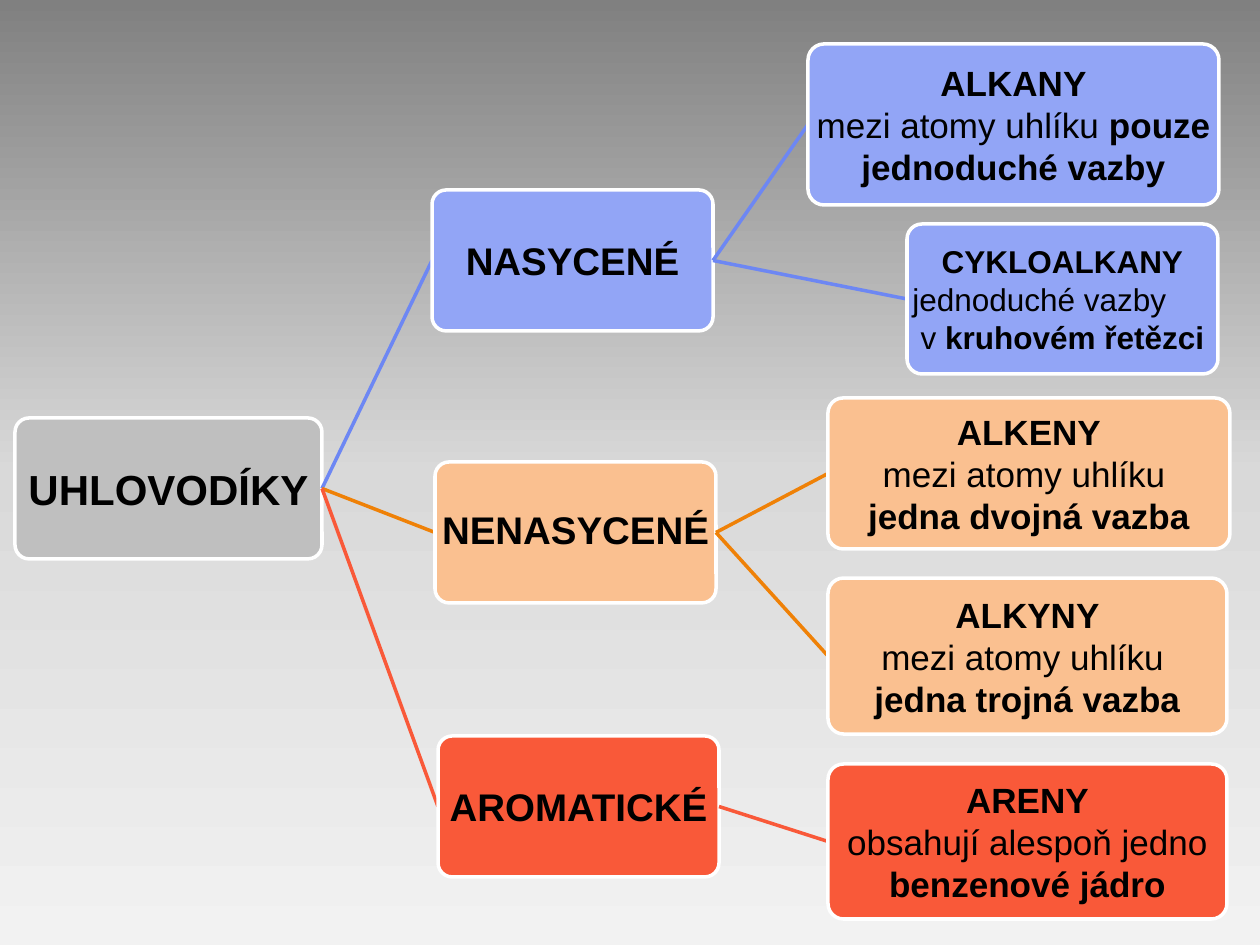
"""Build a slide with a tree diagram that classifies hydrocarbons."""
from copy import deepcopy
from dataclasses import dataclass

from pptx import Presentation
from pptx import util as u
from pptx.dml.color import RGBColor
from pptx.enum import shapes, text
from pptx.oxml.ns import qn
from pptx.oxml.xmlchemy import OxmlElement

PX_PER_INCH = 126
BLACK = RGBColor(0x00, 0x00, 0x00)
WHITE = RGBColor(0xFF, 0xFF, 0xFF)
GREY = RGBColor(0xBF, 0xBF, 0xBF)
BLUE = RGBColor(0x92, 0xA5, 0xF6)
BLUE_LINE = RGBColor(0x6D, 0x87, 0xF3)
PEACH = RGBColor(0xFA, 0xC0, 0x90)
ORANGE_LINE = RGBColor(0xEF, 0x81, 0x07)
RED = RGBColor(0xF9, 0x59, 0x39)
BACKGROUND = (
    (0.0, RGBColor(0x80, 0x80, 0x80)),
    (0.5, RGBColor(0xD9, 0xD9, 0xD9)),
    (1.0, RGBColor(0xF2, 0xF2, 0xF2)),
)
CENTER = text.PP_ALIGN.CENTER
LEFT = text.PP_ALIGN.LEFT


@dataclass(frozen=True)
class Line:
    bold: str = ""
    plain: str = ""
    align: text.PP_ALIGN = CENTER


@dataclass(frozen=True)
class Node:
    left: int
    top: int
    width: int
    height: int
    fill: RGBColor
    link: RGBColor
    size: int
    lines: tuple[Line, ...]
    children: tuple["Node", ...] = ()
    inset: int = 1
    spacing: float = 1.0


def group(left: int, top: int, fill: RGBColor, link: RGBColor, title: str,
          children: tuple[Node, ...], spacing: float = 1.0) -> Node:
    return Node(left, top, 281, 141, fill, link, 22, (Line(title),), children, 2, spacing)


ALKANES = Node(808, 44, 411, 161, BLUE, BLUE_LINE, 20, (
    Line("ALKANY"), Line("pouze jednoduché vazby", "mezi atomy uhlíku ")))
CYCLOALKANES = Node(907, 224, 311, 150, BLUE, BLUE_LINE, 18, (
    Line("CYKLOALKANY"), Line(plain="jednoduché vazby", align=LEFT),
    Line("kruhovém řetězci", "v ")))
ALKENES = Node(828, 398, 402, 151, PEACH, ORANGE_LINE, 20, (
    Line("ALKENY"), Line(plain="mezi atomy uhlíku "), Line("jedna dvojná vazba")))
ALKYNES = Node(828, 578, 399, 156, PEACH, ORANGE_LINE, 20, (
    Line("ALKYNY"), Line(plain="mezi atomy uhlíku "), Line("jedna trojná vazba")))
ARENES = Node(828, 764, 399, 155, RED, RED, 20, (
    Line("ARENY"), Line("benzenové jádro", "obsahují alespoň jedno ")))
HYDROCARBONS = Node(15, 418, 307, 141, GREY, GREY, 24, (Line("UHLOVODÍKY"),), (
    group(432, 190, BLUE, BLUE_LINE, "NASYCENÉ", (ALKANES, CYCLOALKANES)),
    group(435, 462, PEACH, ORANGE_LINE, "NENASYCENÉ", (ALKENES, ALKYNES), 0.9),
    group(438, 736, RED, RED, "AROMATICKÉ", (ARENES,)),
), 2)


def px(length: int) -> u.Emu:
    return u.Emu(round(length * u.Inches(1) / PX_PER_INCH))


def paint_background(page) -> None:
    fill = page.background.fill
    fill.gradient()
    fill.gradient_angle = 270
    stops = page.element.find(".//" + qn("a:gsLst"))
    stops.append(deepcopy(stops[-1]))
    for stop, (position, color) in zip(fill.gradient_stops, BACKGROUND):
        stop.position = position
        stop.color.rgb = color


def write_lines(box, node: Node) -> None:
    frame = box.text_frame
    frame.word_wrap = True
    frame.vertical_anchor = text.MSO_ANCHOR.MIDDLE
    frame.margin_left = frame.margin_right = px(node.inset)
    frame.margin_top = frame.margin_bottom = px(node.inset)
    for index, line in enumerate(node.lines):
        para = frame.add_paragraph() if index else frame.paragraphs[0]
        para.alignment = line.align
        para.line_spacing = node.spacing
        for words, bold in ((line.plain, False), (line.bold, True)):
            if words:
                span = para.add_run()
                span.text = words
                span.font.name = "Arial"
                span.font.size = u.Pt(node.size)
                span.font.bold = bold
                span.font.color.rgb = BLACK


def draw_box(page, node: Node):
    box = page.shapes.add_shape(
        shapes.MSO_SHAPE.ROUNDED_RECTANGLE,
        px(node.left), px(node.top), px(node.width), px(node.height))
    box.adjustments[0] = 0.1
    box.shadow.inherit = False
    box.fill.solid()
    box.fill.fore_color.rgb = node.fill
    box.line.color.rgb = WHITE
    box.line.width = u.Pt(2)
    write_lines(box, node)
    return box


def draw_link(page, parent_box, color: RGBColor):
    link = page.shapes.add_connector(shapes.MSO_CONNECTOR.STRAIGHT, 0, 0, 0, 0)
    link.line.color.rgb = color
    link.line.width = u.Pt(2)
    link.element.spPr.append(OxmlElement("a:effectLst"))
    link.begin_connect(parent_box, 3)
    return link


def draw_tree(page, node: Node):
    box = draw_box(page, node)
    for child in node.children:
        link = draw_link(page, box, child.link)
        link.end_connect(draw_tree(page, child), 1)
    return box


def main() -> None:
    deck = Presentation()
    deck.slide_width, deck.slide_height = px(1260), px(945)
    page = deck.slides.add_slide(deck.slide_layouts[6])
    paint_background(page)
    draw_tree(page, HYDROCARBONS)
    deck.save("out.pptx")


if __name__ == "__main__":
    main()
